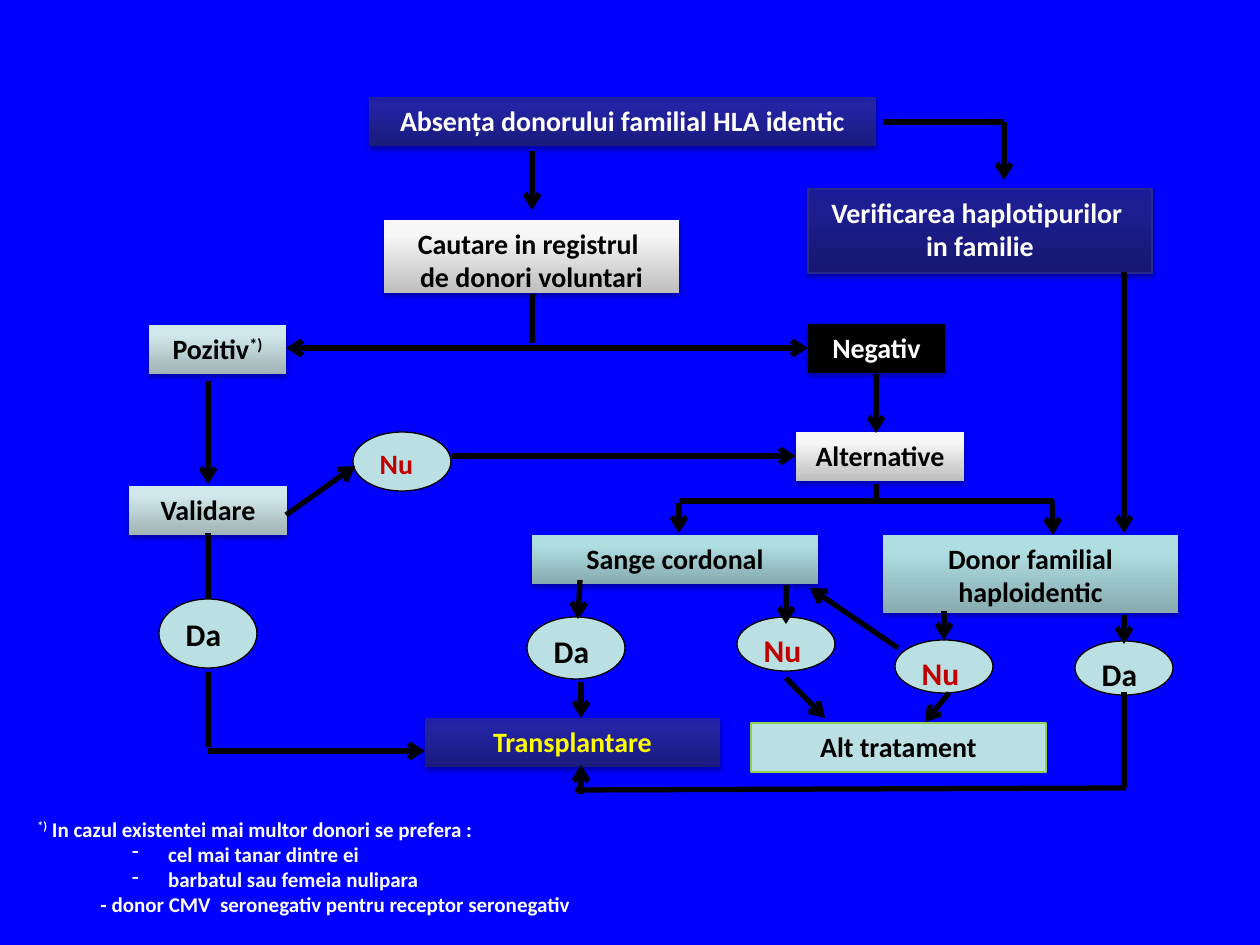
from copy import deepcopy

from lxml import etree
from pptx import Presentation
from pptx.dml.color import RGBColor
from pptx.enum.shapes import MSO_CONNECTOR, MSO_SHAPE
from pptx.enum.text import MSO_ANCHOR, PP_ALIGN
from pptx.oxml.ns import qn
from pptx.util import Emu, Pt

RECTANGLE, OVAL = MSO_SHAPE.RECTANGLE, MSO_SHAPE.OVAL
STRAIGHT = MSO_CONNECTOR.STRAIGHT
TOP = MSO_ANCHOR.TOP
LEFT, CENTER = PP_ALIGN.LEFT, PP_ALIGN.CENTER

EMU_PER_PX = 914400 / 126
FONT = "Calibri"
COLORS = {
    "background": "0000FF", "black": "000000", "white": "FFFFFF",
    "yellow": "FFFF00", "red": "C00000", "pale": "BBE0E3",
    "green": "92D050", "navy_edge": "2A2A89",
}
# Gradient colours from the bottom edge upwards
GRADIENTS = {
    "blue": ("1B1B7E", "2323A3", "2020A6"),
    "navy": ("171771", "1E1E93", "1C1C96"),
    "silver": ("BEBEBE", "F7F7F7", "F8F8F8"),
    "mist": ("A0B3B5", "D0E8EB", "D1EAEC"),
    "teal": ("87ABAE", "AFDEE2", "AFE0E4"),
}
GRADIENT_POSITIONS = (0, 0.8, 1)

# Each paragraph is a list of (text, is superscript)
BOXES = [
    # left, top, width, height, fill, text colour, edge, shadow, paragraphs
    (369, 97, 507, 49, "blue", "white", None, True,
     [[("Absența donorului familial HLA identic", False)]]),
    (384, 220, 295, 73, "silver", "black", None, True,
     [[("Cautare in registrul ", False)], [("de donori voluntari", False)]]),
    (808, 189, 344, 84, "navy", "white", "navy_edge", True,
     [[("Verificarea haplotipurilor ", False)], [("in familie", False)]]),
    (149, 325, 137, 49, "mist", "black", None, True,
     [[("Pozitiv", False), ("*)", True)]]),
    (808, 324, 137, 49, "black", "white", None, True, [[("Negativ", False)]]),
    (796, 432, 168, 49, "silver", "black", None, True, [[("Alternative", False)]]),
    (129, 486, 158, 49, "mist", "black", None, True, [[("Validare", False)]]),
    (532, 535, 286, 49, "teal", "black", None, True, [[("Sange cordonal", False)]]),
    (883, 535, 295, 78, "teal", "black", None, True,
     [[("Donor familial haploidentic", False)]]),
    (425, 718, 295, 49, "blue", "yellow", None, True, [[("Transplantare", False)]]),
    (751, 723, 295, 49, "pale", "black", "green", False, [[("Alt tratament", False)]]),
]
ANSWER_WIDTH = 98
ANSWERS = [
    # left, top, height, text, colour, text size
    (159, 599, 69, "Da", "black", 18),
    (527, 617, 62, "Da", "black", 18),
    (1075, 641, 54, "Da", "black", 18),
    (895, 640, 53, "Nu", "red", 18),
    (737, 617, 54, "Nu", "red", 18),
    (353, 432, 59, "Nu", "red", 16),
]
ARROWS = [
    (532, 151, 532, 210), (1004, 122, 1004, 180),
    (876, 374, 876, 433), (208, 381, 208, 484),
    (208, 751, 425, 751), (581, 794, 581, 765),
    (532, 348, 808, 348), (532, 348, 286, 348),
    (679, 503, 679, 533), (1124, 615, 1124, 644),
    (1052, 500, 1053, 535), (1124, 272, 1124, 533),
    (944, 611, 944, 640), (786, 585, 786, 624),
    (580, 580, 578, 619), (581, 682, 581, 718),
    (786, 678, 825, 718), (949, 693, 925, 722),
    (898, 648, 810, 588), (286, 515, 355, 466),
    (452, 456, 796, 456),
]
LINES = [
    (208, 533, 208, 599), (208, 672, 208, 747),
    (1124, 692, 1124, 788), (575, 790, 1126, 788),
    (883, 122, 1004, 122), (532, 294, 532, 343),
    (876, 484, 876, 503), (679, 501, 1053, 501),
]
NOTE_PARAGRAPHS = [
    # runs, is bulleted
    ([("*)", True), (" In cazul existentei mai multor donori se prefera :", False)], False),
    ([(" cel mai tanar dintre ei", False)], True),
    ([(" barbatul sau femeia nulipara", False)], True),
    ([("\t- donor CMV  seronegativ pentru receptor seronegativ", False)], False),
]


def px(value):
    return Emu(round(value * EMU_PER_PX))


def rgb(name):
    return RGBColor.from_string(COLORS[name])


def add_child(parent, tag, **attributes):
    return etree.SubElement(parent, qn(tag), attributes)


def write_paragraph(paragraph, runs, size, color, alignment):
    paragraph.alignment = alignment
    font_values = {"name": FONT, "size": Pt(size), "bold": True}
    for text, superscript in runs:
        run = paragraph.add_run()
        run.text = text
        for name, value in font_values.items():
            setattr(run.font, name, value)
        run.font.color.rgb = rgb(color)
        if superscript:
            run.font._element.set("baseline", "30000")


def write_text(shape, paragraphs, size, color, alignment):
    frame = shape.text_frame
    frame.word_wrap = True
    frame.vertical_anchor = TOP
    for index, runs in enumerate(paragraphs):
        paragraph = frame.add_paragraph() if index else frame.paragraphs[0]
        write_paragraph(paragraph, runs, size, color, alignment)
    return frame


def fill_shape(shape, fill):
    if fill in COLORS:
        shape.fill.solid()
        shape.fill.fore_color.rgb = rgb(fill)
        return
    shape.fill.gradient()
    shape.fill.gradient_angle = 90
    stop_list = shape._element.spPr.find(".//" + qn("a:gsLst"))
    stop_list.append(deepcopy(stop_list[0]))
    stops = zip(shape.fill.gradient_stops, GRADIENT_POSITIONS, GRADIENTS[fill])
    for stop, position, color in stops:
        stop.position = position
        stop.color.rgb = RGBColor.from_string(color)


def add_shadow(shape):
    effects = shape._element.spPr.find(qn("a:effectLst"))
    shadow = add_child(effects, "a:outerShdw", blurRad="40000", dist="23000",
                       dir="5400000", rotWithShape="0")
    color = add_child(shadow, "a:srgbClr", val=COLORS["black"])
    add_child(color, "a:alpha", val="35000")


def add_node(slide, kind, bounds, fill, edge):
    shape = slide.shapes.add_shape(kind, *map(px, bounds))
    fill_shape(shape, fill)
    if edge:
        shape.line.color.rgb = rgb(edge)
        shape.line.width = Pt(0.75)
    else:
        shape.line.fill.background()
    shape.shadow.inherit = False
    return shape


def add_link(slide, ends, arrow):
    link = slide.shapes.add_connector(STRAIGHT, *map(px, ends))
    link.line.color.rgb = rgb("black")
    link.line.width = Pt(3)
    if arrow:
        add_child(link.line._get_or_add_ln(), "a:tailEnd", type="arrow")
    add_child(link._element.spPr, "a:effectLst")


def add_note(slide):
    box = slide.shapes.add_textbox(*map(px, (25, 810, 751, 115)))
    frame = write_text(box, [runs for runs, _ in NOTE_PARAGRAPHS], 12, "white", LEFT)
    for paragraph, (_, bulleted) in zip(frame.paragraphs, NOTE_PARAGRAPHS):
        if bulleted:
            properties = paragraph._p.get_or_add_pPr()
            properties.set("marL", "914400")
            properties.set("indent", "-228600")
            add_child(properties, "a:buFontTx")
            add_child(properties, "a:buChar", char="-")


def main():
    presentation = Presentation()
    presentation.slide_width, presentation.slide_height = px(1260), px(945)
    slide = presentation.slides.add_slide(presentation.slide_layouts[6])
    slide.background.fill.solid()
    slide.background.fill.fore_color.rgb = rgb("background")

    # Steps of the decision tree
    for *bounds, fill, color, edge, shadow, paragraphs in BOXES:
        box = add_node(slide, RECTANGLE, bounds, fill, edge)
        if shadow:
            add_shadow(box)
        write_text(box, paragraphs, 16, color, CENTER)

    # Yes and no answers
    for left, top, height, text, color, size in ANSWERS:
        oval = add_node(slide, OVAL, (left, top, ANSWER_WIDTH, height), "pale", "black")
        write_text(oval, [[(text, False)]], size, color, LEFT)

    # Links between steps
    for links, arrow in ((LINES, False), (ARROWS, True)):
        for ends in links:
            add_link(slide, ends, arrow)

    # Footnote
    add_note(slide)
    presentation.save("out.pptx")


if __name__ == "__main__":
    main()
